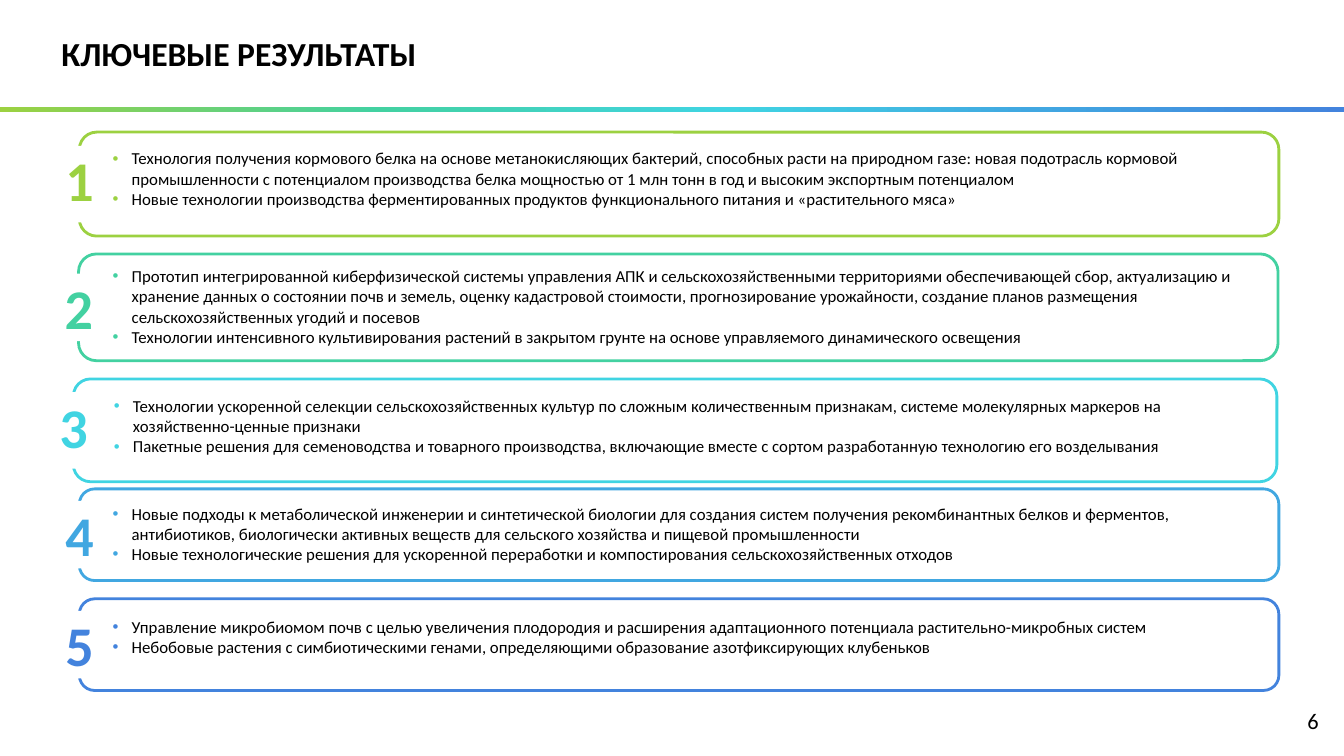
from lxml import etree
from pptx import Presentation
from pptx.dml.color import RGBColor
from pptx.enum.shapes import MSO_SHAPE
from pptx.enum.text import MSO_ANCHOR, PP_ALIGN
from pptx.oxml.ns import qn
from pptx.util import Cm, Pt

RECT, ROUND = MSO_SHAPE.RECTANGLE, MSO_SHAPE.ROUNDED_RECTANGLE
TOP, MIDDLE = MSO_ANCHOR.TOP, MSO_ANCHOR.MIDDLE
LEFT, RIGHT = PP_ALIGN.LEFT, PP_ALIGN.RIGHT

BLACK = RGBColor(0x00, 0x00, 0x00)
WHITE = RGBColor(0xFF, 0xFF, 0xFF)
LIME = RGBColor(0x9C, 0xD1, 0x41)
GREEN = RGBColor(0x43, 0xD1, 0xA1)
CYAN = RGBColor(0x40, 0xD4, 0xE2)
SKY = RGBColor(0x41, 0xA7, 0xE1)
BLUE = RGBColor(0x43, 0x83, 0xDD)

FONT = "Calibri"
HEAD = {"name": FONT, "size": Pt(24), "bold": True}
BODY = {"name": FONT, "size": Pt(12)}
DIGIT = {"name": FONT, "size": Pt(40), "bold": True}
PAGE = {"name": FONT, "size": Pt(16)}

STOPS = [(0, LIME), (28, GREEN), (54, CYAN), (77, SKY), (100, BLUE)]
INDENT = Cm(0.48)

# Card: colour, box, badge height, text box (left, drop, width, height), items
CARDS = [
    (LIME, (2, 3.33, 30.23, 2.62), 1.93, (2.59, 0.28, 29.54, 1.8), [
        "Технология получения кормового белка на основе метанокисляющих бактерий, "
        "способных расти на природном газе: новая подотрасль кормовой промышленности "
        "с потенциалом производства белка мощностью от 1 млн тонн в год и высоким "
        "экспортным потенциалом",
        "Новые технологии производства ферментированных продуктов функционального "
        "питания и «растительного мяса»"]),
    (GREEN, (1.98, 6.4, 30.23, 2.69), 1.7, (2.59, 0.18, 28.98, 2.31), [
        "Прототип интегрированной киберфизической системы управления АПК и "
        "сельскохозяйственными территориями обеспечивающей сбор, актуализацию и "
        "хранение данных о состоянии почв и земель, оценку кадастровой стоимости, "
        "прогнозирование урожайности, создание планов размещения "
        "сельскохозяйственных угодий и посевов",
        "Технологии интенсивного культивирования растений в закрытом грунте на "
        "основе управляемого динамического освещения"]),
    (CYAN, (1.85, 9.55, 30.33, 2.59), 1.93, (2.62, 0.3, 28.24, 2.03), [
        "Технологии ускоренной селекции сельскохозяйственных культур по сложным "
        "количественным признакам, системе молекулярных маркеров на "
        "хозяйственно-ценные признаки",
        "Пакетные решения для семеноводства и товарного производства, включающие "
        "вместе с сортом разработанную технологию его возделывания"]),
    (SKY, (2, 12.32, 30.23, 2.31), 1.7, (2.59, 0.25, 28.5, 1.8), [
        "Новые подходы к метаболической инженерии и синтетической биологии для "
        "создания систем получения рекомбинантных белков и ферментов, антибиотиков, "
        "биологически активных веществ для сельского хозяйства и пищевой "
        "промышленности",
        "Новые технологические решения для ускоренной переработки и компостирования "
        "сельскохозяйственных отходов"]),
    (BLUE, (2, 15.09, 30.23, 2.31), 1.7, (2.59, 0.33, 28.14, 1.27), [
        "Управление микробиомом почв с целью увеличения плодородия и расширения "
        "адаптационного потенциала растительно-микробных систем",
        "Небобовые растения с симбиотическими генами, определяющими образование "
        "азотфиксирующих клубеньков"]),
]


def style(font, form, color):
    for key, value in form.items():
        setattr(font, key, value)
    font.color.rgb = color


def add_part(shapes, kind, box):
    part = shapes.add_shape(kind, *map(Cm, box))
    part.shadow.inherit = False
    return part


def add_label(shapes, text, box, form, align):
    frame = shapes.add_textbox(*map(Cm, box)).text_frame
    frame.word_wrap = True
    frame.vertical_anchor = MIDDLE
    para = frame.paragraphs[0]
    para.text = text
    para.alignment = align
    style(para.font, form, BLACK)
    return para


def add_bullet(para, color):
    props = para._p.get_or_add_pPr()
    props.set("marL", str(INDENT))
    props.set("indent", str(-INDENT))
    tint = etree.SubElement(props, qn("a:buClr"))
    etree.SubElement(tint, qn("a:srgbClr"), val=str(color))
    etree.SubElement(props, qn("a:buFont"), typeface="Arial")
    etree.SubElement(props, qn("a:buChar"), char="•")


def add_head(slide, box):
    left, top, width, height = box
    title = add_label(slide.shapes, "КЛЮЧЕВЫЕ РЕЗУЛЬТАТЫ",
                      (left + 1.3, top, 30.15, height), HEAD, LEFT)
    title.line_spacing = 0.9

    # Rainbow rule under the title
    rule = add_part(slide.shapes, RECT, (left, top + 2.69, width, 0.13))
    rule.line.fill.background()
    rule.fill.gradient()
    rule.fill.gradient_angle = 0
    stops = rule._element.spPr.find(qn("a:gradFill")).find(qn("a:gsLst"))
    for stop in list(stops):
        stops.remove(stop)
    for place, color in STOPS:
        stop = etree.SubElement(stops, qn("a:gs"), pos=str(place * 1000))
        etree.SubElement(stop, qn("a:srgbClr"), val=str(color))


def add_card(slide, number, color, box, tall, area, items):
    shapes = slide.shapes.add_group_shape().shapes
    left, top, width, height = box

    # Outline
    frame = add_part(shapes, ROUND, box)
    frame.fill.background()
    frame.line.color.rgb = color
    frame.line.width = Pt(2)

    # Number badge, centred on the left edge
    badge = add_part(shapes, RECT,
                     (left - 0.6, top + (height - tall) / 2, 1.3, tall))
    badge.fill.solid()
    badge.fill.fore_color.rgb = WHITE
    badge.line.fill.background()
    text = badge.text_frame
    text.word_wrap = False
    text.vertical_anchor = TOP
    text.margin_top = text.margin_bottom = 0
    para = text.paragraphs[0]
    para.text = str(number)
    para.alignment = LEFT
    style(para.font, DIGIT, color)

    # Bulleted results
    start, drop, wide, high = area
    text = shapes.add_textbox(
        *map(Cm, (start, top + drop, wide, high))).text_frame
    text.word_wrap = True
    for index, item in enumerate(items):
        para = text.add_paragraph() if index else text.paragraphs[0]
        para.text = item
        add_bullet(para, color)
        style(para.font, BODY, BLACK)


def main():
    deck = Presentation()
    deck.slide_width, deck.slide_height = Cm(33.87), Cm(19.05)
    slide = deck.slides.add_slide(deck.slide_layouts[6])
    add_head(slide, (0, 0, 33.87, 2.82))
    for number, card in enumerate(CARDS, 1):
        add_card(slide, number, *card)
    add_label(slide.shapes, "6", (25.86, 17.65, 7.62, 1.02), PAGE, RIGHT)
    deck.save("out.pptx")


if __name__ == "__main__":
    main()
